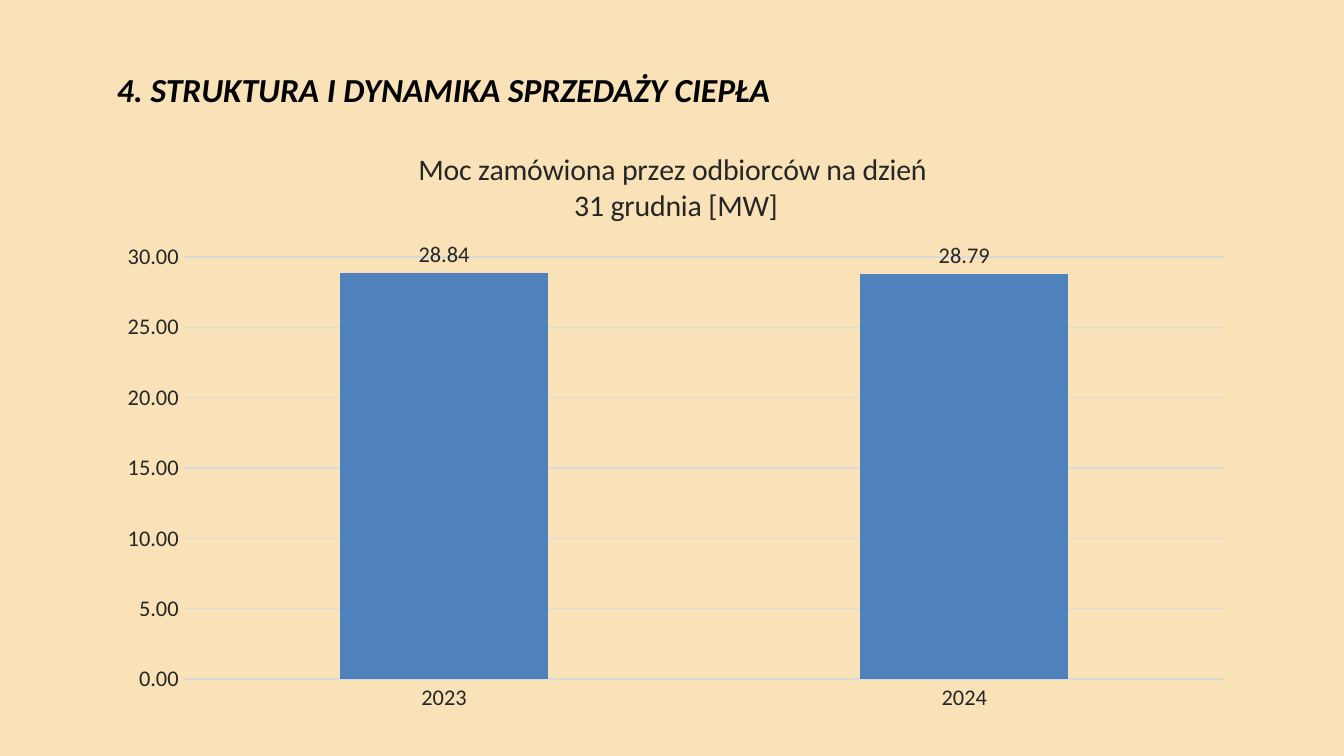
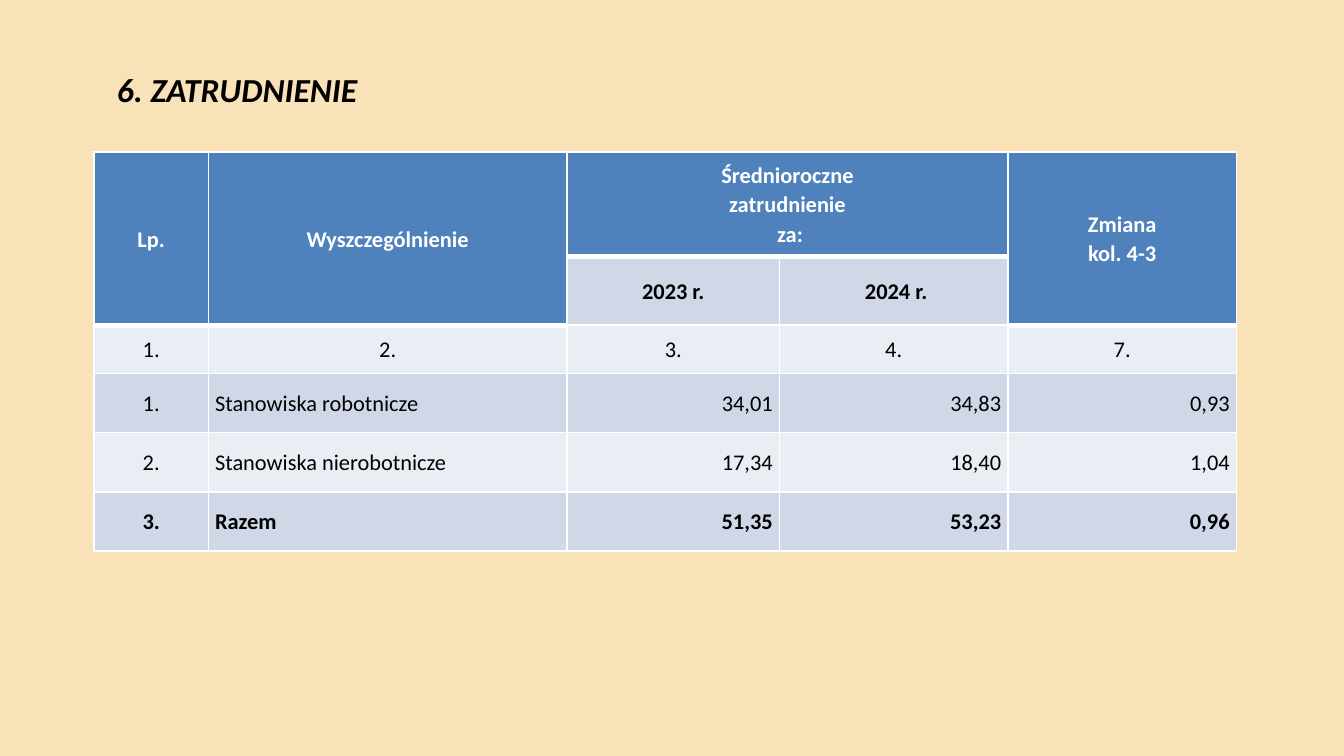
"""Build two slides on heat sales and employment."""
from dataclasses import dataclass

from lxml import etree
from pptx import Presentation
from pptx.chart.data import CategoryChartData
from pptx.dml.color import RGBColor
from pptx.enum.chart import XL_CHART_TYPE, XL_LABEL_POSITION, XL_TICK_MARK
from pptx.enum.text import MSO_ANCHOR, PP_ALIGN
from pptx.oxml.ns import qn
from pptx.util import Inches, Pt

CLUSTERED = XL_CHART_TYPE.COLUMN_CLUSTERED
OUTSIDE_END = XL_LABEL_POSITION.OUTSIDE_END
NO_TICK = XL_TICK_MARK.NONE
TOP, MIDDLE = MSO_ANCHOR.TOP, MSO_ANCHOR.MIDDLE
LEFT, CENTER, RIGHT = PP_ALIGN.LEFT, PP_ALIGN.CENTER, PP_ALIGN.RIGHT
TITLE_ONLY = 5


@dataclass(frozen=True)
class Theme:
    font: str = "Calibri"
    background: str = "FAE2B8"
    black: str = "000000"
    white: str = "FFFFFF"
    chart_text: str = "262626"
    grid: str = "D9D9D9"
    accent: str = "4F81BD"
    bands: tuple[str, str] = ("E9EDF4", "D0D8E8")
    title_size: int = 18
    chart_title_size: int = 16
    body_size: int = 12
    line_spacing: float = 1.07
    number_format: str = "#,##0.00"


@dataclass(frozen=True)
class Box:
    left: float
    top: float
    width: float
    height: float

    def lengths(self) -> tuple:
        return tuple(Inches(n) for n in (self.left, self.top, self.width, self.height))


@dataclass(frozen=True)
class CellStyle:
    fill: str
    color: str
    bold: bool = False
    align: PP_ALIGN = CENTER
    bottom_line: int = 1


THEME = Theme()
TITLE_BOX = Box(0.78, 0.47, 8.5, 0.47)
CHART_BOX = Box(0.78, 0.94, 8.5, 4.44)
TABLE_BOX = Box(0.7, 1.13, 8.5, 2.98)

CHART_TITLE = "Moc zamówiona przez odbiorców na dzień \n31 grudnia [MW]"
ORDERED_POWER = {"2023": 28.84, "2024": 28.79}

COLUMN_WIDTHS = (0.85, 2.67, 1.58, 1.7, 1.7)
ROW_HEIGHTS = (0.78, 0.51, 0.36, 0.44, 0.44, 0.44)
MERGES = (((0, 0), (1, 0)), ((0, 1), (1, 1)), ((0, 2), (0, 3)), ((0, 4), (1, 4)))
EMPLOYMENT = (
    ("Lp.", "Wyszczególnienie", "Średnioroczne\vzatrudnienie\v za:", "", "Zmiana\vkol. 4-3"),
    ("", "", "2023 r.", " 2024 r.", ""),
    ("1.", "2.", "3.", "4.", "7."),
    ("1.", "Stanowiska robotnicze", "34,01", "34,83", "0,93"),
    ("2.", "Stanowiska nierobotnicze", "17,34", "18,40", "1,04"),
    ("3.", "Razem", "51,35", "53,23", "0,96"),
)
YEAR_ROW, INDEX_ROW, TOTAL_ROW = 1, 2, 5
YEAR_COLUMNS = (2, 3)


def rgb(color: str) -> RGBColor:
    """Turn a hex string into a colour."""
    return RGBColor.from_string(color)


def format_font(font, size: int, color: str, bold: bool = False, italic: bool = False) -> None:
    """Apply the theme font with the given look."""
    font.name = THEME.font
    font.size = Pt(size)
    font.color.rgb = rgb(color)
    font.bold = bold
    font.italic = italic


def add_titled_slide(presentation, title: str):
    """Add a slide whose title carries the shared style."""
    slide = presentation.slides.add_slide(presentation.slide_layouts[TITLE_ONLY])
    shape = slide.shapes.title
    shape.left, shape.top, shape.width, shape.height = TITLE_BOX.lengths()
    frame = shape.text_frame
    frame.text = title
    frame.word_wrap = True
    frame.vertical_anchor = TOP
    frame.margin_left = frame.margin_right = Inches(0.09)
    frame.margin_top = frame.margin_bottom = Inches(0.04)
    paragraph = frame.paragraphs[0]
    paragraph.alignment = LEFT
    for run in paragraph.runs:
        format_font(run.font, THEME.title_size, THEME.black, bold=True, italic=True)
    return slide


def format_line(line, color: str) -> None:
    """Draw a thin solid line."""
    line.color.rgb = rgb(color)
    line.width = Pt(0.75)


def add_power_chart(slide) -> None:
    """Add the column chart of ordered power."""
    data = CategoryChartData(number_format=THEME.number_format)
    data.categories = list(ORDERED_POWER)
    data.add_series("Series 1", list(ORDERED_POWER.values()))
    chart = slide.shapes.add_chart(CLUSTERED, *CHART_BOX.lengths(), data).chart
    format_font(chart.font, THEME.body_size, THEME.chart_text)
    chart.has_legend = False

    chart.has_title = True
    chart.chart_title.include_in_layout = False
    frame = chart.chart_title.text_frame
    frame.text = CHART_TITLE
    for paragraph in frame.paragraphs:
        for run in paragraph.runs:
            format_font(run.font, THEME.chart_title_size, THEME.chart_text)

    for axis in (chart.category_axis, chart.value_axis):
        axis.major_tick_mark = axis.minor_tick_mark = NO_TICK
        format_font(axis.tick_labels.font, THEME.body_size, THEME.chart_text)
    format_line(chart.category_axis.format.line, THEME.grid)
    value_axis = chart.value_axis
    value_axis.minimum_scale, value_axis.maximum_scale = 0, 30
    value_axis.major_unit = 5
    value_axis.format.line.fill.background()
    format_line(value_axis.major_gridlines.format.line, THEME.grid)
    value_axis.tick_labels.number_format = THEME.number_format
    value_axis.tick_labels.number_format_is_linked = False

    plot = chart.plots[0]
    plot.gap_width = 150
    plot.vary_by_categories = False
    series = plot.series[0]
    series.format.fill.solid()
    series.format.fill.fore_color.rgb = rgb(THEME.accent)
    labels = series.data_labels
    labels.show_value = True
    labels.position = OUTSIDE_END
    labels.number_format = THEME.number_format
    labels.number_format_is_linked = False
    format_font(labels.font, THEME.body_size, THEME.chart_text)


def cell_style(row: int, column: int) -> CellStyle:
    """Choose the look of a table cell from its place."""
    if row == 0 or (row == YEAR_ROW and column not in YEAR_COLUMNS):
        return CellStyle(THEME.accent, THEME.white, True, bottom_line=3)
    align = CENTER
    if row > INDEX_ROW and column > 0:
        align = LEFT if column == 1 else RIGHT
    return CellStyle(THEME.bands[row % 2], THEME.black, row in (YEAR_ROW, TOTAL_ROW), align)


def add_borders(cell, bottom_width: int) -> None:
    """Draw white borders on all sides of a cell."""
    properties = cell._tc.get_or_add_tcPr()
    widths = {"a:lnL": 1, "a:lnR": 1, "a:lnT": 1, "a:lnB": bottom_width}
    for position, (tag, width) in enumerate(widths.items()):
        line = etree.Element(qn(tag), w=str(Pt(width)))
        fill = etree.SubElement(line, qn("a:solidFill"))
        etree.SubElement(fill, qn("a:srgbClr"), val=THEME.white)
        properties.insert(position, line)


def format_cell(cell, text: str, style: CellStyle) -> None:
    """Fill a cell with text, colour and borders."""
    cell.fill.solid()
    cell.fill.fore_color.rgb = rgb(style.fill)
    cell.vertical_anchor = MIDDLE
    cell.margin_left = cell.margin_right = Inches(0.05)
    cell.margin_top = cell.margin_bottom = Inches(0)
    add_borders(cell, style.bottom_line)
    paragraph = cell.text_frame.paragraphs[0]
    paragraph.text = text
    paragraph.alignment = style.align
    paragraph.line_spacing = THEME.line_spacing
    for run in paragraph.runs:
        format_font(run.font, THEME.body_size, style.color, style.bold)


def add_employment_table(slide) -> None:
    """Add the table of average yearly employment."""
    table = slide.shapes.add_table(
        len(ROW_HEIGHTS), len(COLUMN_WIDTHS), *TABLE_BOX.lengths()).table
    for column, width in zip(table.columns, COLUMN_WIDTHS):
        column.width = Inches(width)
    for row, height in zip(table.rows, ROW_HEIGHTS):
        row.height = Inches(height)
    for row_index, texts in enumerate(EMPLOYMENT):
        for column_index, text in enumerate(texts):
            format_cell(table.cell(row_index, column_index), text,
                        cell_style(row_index, column_index))
    for first, last in MERGES:
        table.cell(*first).merge(table.cell(*last))


def main() -> None:
    """Build and save the presentation."""
    presentation = Presentation()
    presentation.slide_width = Inches(10)
    presentation.slide_height = Inches(10) * 9 // 16
    background = presentation.slide_master.background.fill
    background.solid()
    background.fore_color.rgb = rgb(THEME.background)
    add_power_chart(add_titled_slide(presentation, "4. STRUKTURA I DYNAMIKA SPRZEDAŻY CIEPŁA"))
    add_employment_table(add_titled_slide(presentation, "6. ZATRUDNIENIE"))
    presentation.save("out.pptx")


if __name__ == "__main__":
    main()
